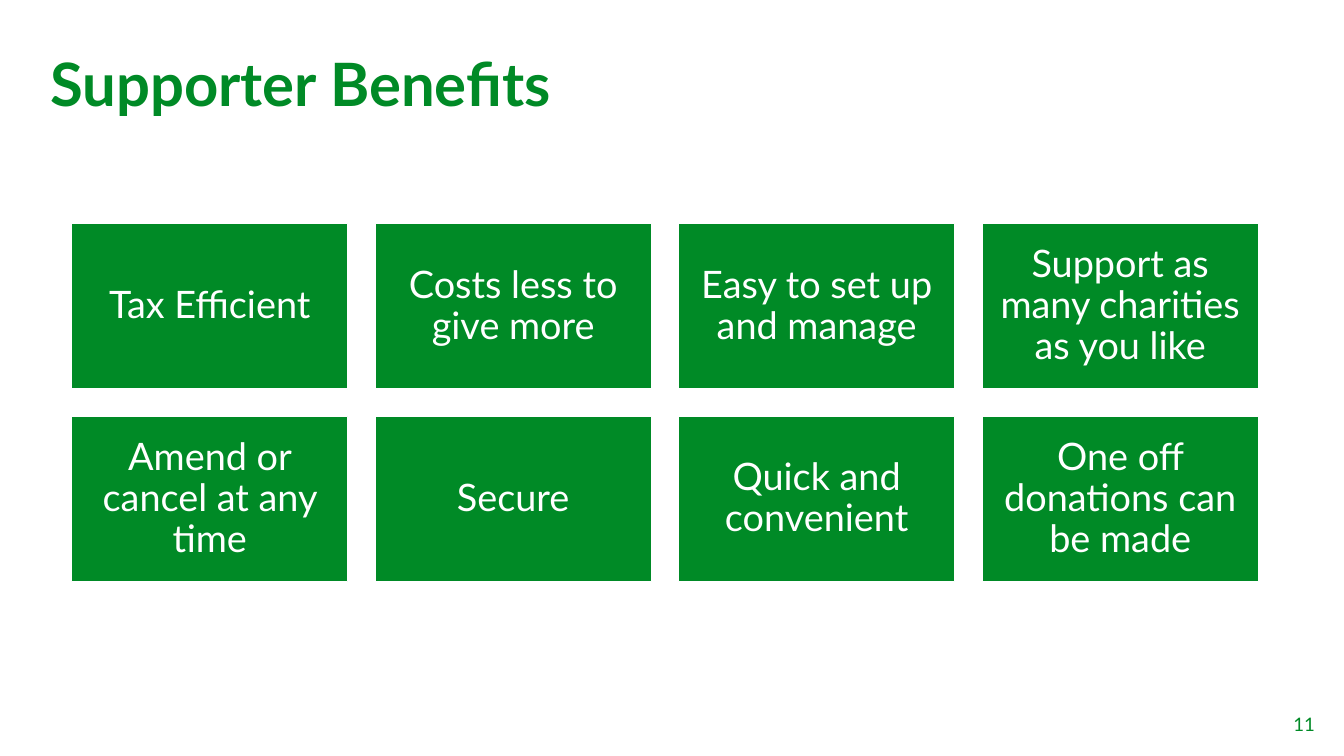
from dataclasses import dataclass

from pptx import Presentation
from pptx.dml.color import RGBColor
from pptx.enum.shapes import MSO_SHAPE
from pptx.enum.text import MSO_ANCHOR, MSO_AUTO_SIZE, PP_ALIGN
from pptx.util import Inches, Pt

RECTANGLE = MSO_SHAPE.RECTANGLE
TOP, MIDDLE = MSO_ANCHOR.TOP, MSO_ANCHOR.MIDDLE
LEFT, CENTER, RIGHT = PP_ALIGN.LEFT, PP_ALIGN.CENTER, PP_ALIGN.RIGHT
NO_AUTOFIT = MSO_AUTO_SIZE.NONE


@dataclass(frozen=True)
class Theme:
    font: str = "Lato"
    green: RGBColor = RGBColor(0x00, 0x8A, 0x26)
    white: RGBColor = RGBColor(0xFF, 0xFF, 0xFF)
    title_size: float = 42.7
    benefit_size: float = 27
    number_size: float = 13.3


THEME = Theme()


def write(frame, text, size, color, align, anchor, bold=False):
    frame.word_wrap = True
    frame.auto_size = NO_AUTOFIT
    frame.vertical_anchor = anchor
    paragraph = frame.paragraphs[0]
    paragraph.text = text
    paragraph.alignment = align
    paragraph.line_spacing = 0.9
    paragraph.font.name = THEME.font
    paragraph.font.size = Pt(size)
    paragraph.font.bold = bold
    paragraph.font.color.rgb = color


presentation = Presentation()
presentation.slide_width = Inches(13.33)
presentation.slide_height = Inches(7.5)
slide = presentation.slides.add_slide(presentation.slide_layouts[5])

heading = slide.shapes.title
heading.left, heading.top = Inches(0.4), Inches(0.49)
heading.width, heading.height = Inches(5.88), Inches(1.11)
write(heading.text_frame, "Supporter Benefits", THEME.title_size, THEME.green, LEFT, TOP, bold=True)

page_number = slide.shapes.add_textbox(Inches(10.76), Inches(7.02), Inches(2.38), Inches(0.32))
write(page_number.text_frame, "11", THEME.number_size, THEME.green, RIGHT, TOP)
page_number.text_frame.paragraphs[0].line_spacing = 1.0

benefits = [
    "Tax Efficient",
    "Costs less to give more",
    "Easy to set up and manage",
    "Support as many charities as you like",
    "Amend or cancel at any time",
    "Secure",
    "Quick and convenient",
    "One off donations can be made",
]
columns = 4
grid_left, grid_top = 0.71, 2.22
card_width, card_height, gap = 2.74, 1.64, 0.27

for index, benefit in enumerate(benefits):
    row, column = divmod(index, columns)
    card = slide.shapes.add_shape(
        RECTANGLE,
        Inches(grid_left + column * (card_width + gap)),
        Inches(grid_top + row * (card_height + gap)),
        Inches(card_width),
        Inches(card_height),
    )
    card.shadow.inherit = False
    card.fill.solid()
    card.fill.fore_color.rgb = THEME.green
    card.line.color.rgb = THEME.white
    card.line.width = Pt(1)
    frame = card.text_frame
    frame.margin_left = frame.margin_right = Inches(0.11)
    frame.margin_top = frame.margin_bottom = Inches(0.11)
    write(frame, benefit, THEME.benefit_size, THEME.white, CENTER, MIDDLE)

presentation.save("out.pptx")
